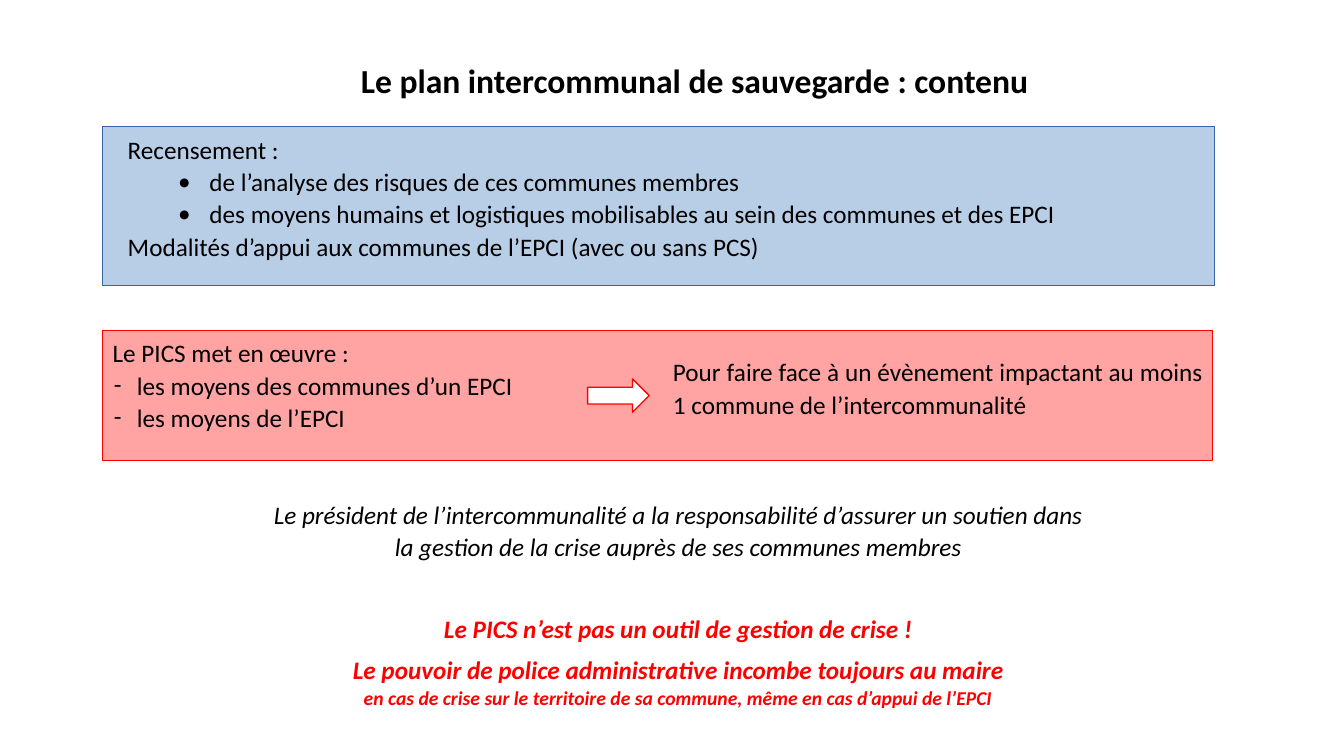
from lxml import etree
from pptx import Presentation
from pptx import util as u
from pptx.dml.color import RGBColor
from pptx.enum import shapes, text
from pptx.oxml import ns

BLACK = RGBColor(0, 0, 0)
WHITE = RGBColor(255, 255, 255)
RED = RGBColor(255, 0, 0)
PINK = RGBColor(0xFF, 0xA3, 0xA3)
BLUE = RGBColor(0x72, 0x9F, 0xCF)
NAVY = RGBColor(0x34, 0x65, 0xA4)

LEFT, CENTER, JUST = (text.PP_ALIGN.LEFT, text.PP_ALIGN.CENTER,
                      text.PP_ALIGN.JUSTIFY)
DOT = dict(mark="•", level=1, indent=2.06, hang=0.79)
DASH = dict(mark="-", indent=0.61, hang=0.58)


def write(para, words, size=18, color=BLACK, bold=False, italic=False,
          align=JUST, lines=1.07, before=0, after=0,
          mark=None, level=0, indent=0, hang=0):
    para.level = level
    para.alignment = align
    para.line_spacing = lines
    para.space_before, para.space_after = u.Pt(before), u.Pt(after)
    if mark:
        props = para._p.get_or_add_pPr()
        props.set("marL", str(u.Cm(indent)))
        props.set("indent", str(-u.Cm(hang)))
        tint = etree.SubElement(props, ns.qn("a:buClr"))
        etree.SubElement(tint, ns.qn("a:srgbClr"), val=str(BLACK))
        etree.SubElement(props, ns.qn("a:buFont"), typeface="Calibri")
        etree.SubElement(props, ns.qn("a:buChar"), char=mark)
    run = para.add_run()
    run.text = words
    font = run.font
    font.name, font.size = "Calibri", u.Pt(size)
    font.bold, font.italic = bold, italic
    font.color.rgb = color


class Page:
    def __init__(self, deck):
        self.slide = deck.slides.add_slide(deck.slide_layouts[5])

    def place(self, item, left, top, width, height):
        item.left, item.top = u.Cm(left), u.Cm(top)
        item.width, item.height = u.Cm(width), u.Cm(height)

    def title(self, words, *area):
        head = self.slide.shapes.title
        self.place(head, *area)
        frame = head.text_frame
        frame.word_wrap = True
        frame.auto_size = text.MSO_AUTO_SIZE.NONE
        frame.vertical_anchor = text.MSO_ANCHOR.TOP
        write(frame.paragraphs[0], words, size=24, bold=True,
              align=LEFT, lines=1.0)

    def shape(self, kind, fill, line, *area, width=1, alpha=None):
        item = self.slide.shapes.add_shape(kind, *map(u.Cm, area))
        item.shadow.inherit = False
        item.fill.solid()
        item.fill.fore_color.rgb = fill
        if alpha:
            tint = item._element.spPr.find(
                ns.qn("a:solidFill") + "/" + ns.qn("a:srgbClr"))
            etree.SubElement(tint, ns.qn("a:alpha"), val=str(alpha * 1000))
        item.line.color.rgb = line
        item.line.width = u.Pt(width)

    def text(self, paras, *area):
        """Add a box of paragraphs, each given as (words, format)."""
        frame = self.slide.shapes.add_textbox(*map(u.Cm, area)).text_frame
        frame.word_wrap = True
        for i, (words, style) in enumerate(paras):
            para = frame.add_paragraph() if i else frame.paragraphs[0]
            write(para, words, **style)


def main():
    deck = Presentation()
    deck.slide_width, deck.slide_height = u.Cm(33.87), u.Cm(19.05)
    page = Page(deck)
    box = shapes.MSO_SHAPE.RECTANGLE
    arrow = shapes.MSO_SHAPE.RIGHT_ARROW

    page.title("Le plan intercommunal de sauvegarde\u00a0: contenu",
               8.84, 1.37, 18.16, 1.04)

    page.shape(box, PINK, RED, 2.59, 8.33, 27.97, 3.28)
    page.text([
        ("Le PICS met en œuvre :", {}),
        ("les moyens des communes d’un EPCI", DASH),
        ("les moyens de l’EPCI", DASH),
    ], 2.59, 8.33, 19.3, 2.69)
    page.text([("Pour faire face à un évènement impactant au moins "
                "1 commune de l’intercommunalité", {})],
              16.71, 8.81, 13.85, 1.88)
    page.shape(arrow, WHITE, RED, 14.81, 9.55, 1.55, 0.84)

    duty = dict(align=CENTER, italic=True)
    alert = dict(duty, color=RED, bold=True)
    page.text([
        ("Le président de l’intercommunalité a la responsabilité d’assurer "
         "un soutien dans la gestion de la crise auprès de ses communes "
         "membres", dict(duty, after=6)),
        ("Le PICS n’est pas un outil de gestion de crise !",
         dict(alert, before=29.5, after=6)),
        ("Le pouvoir de police administrative incombe toujours au maire",
         alert),
        ("en cas de crise sur le territoire de sa commune, même en cas "
         "d’appui de l’EPCI", dict(alert, size=14)),
    ], 6.4, 12.4, 21.39, 5.28)

    page.shape(box, BLUE, NAVY, 2.59, 3.2, 28.02, 3.99, width=0.75, alpha=50)
    page.text([
        ("Recensement\u00a0:", {}),
        ("de l’analyse des risques de ces communes membres", DOT),
        ("des moyens humains et logistiques mobilisables au sein des "
         "communes et des EPCI", DOT),
        ("Modalités d’appui aux communes de l’EPCI (avec ou sans PCS)", {}),
    ], 2.97, 3.2, 26.62, 3.61)

    deck.save("out.pptx")


if __name__ == "__main__":
    main()
